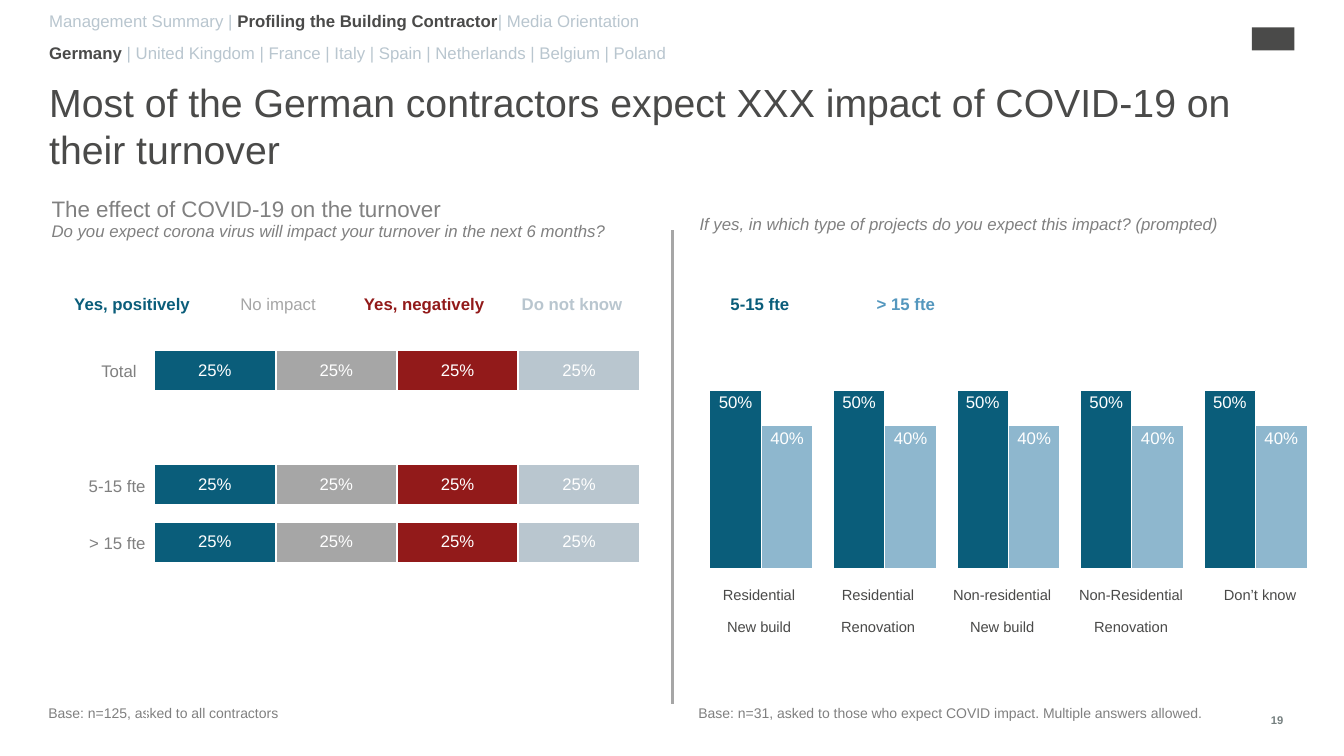
"""Build the slide on the expected impact of COVID-19 on German contractors' turnover."""
from lxml import etree
from pptx import Presentation, util as u
from pptx.chart import data
from pptx.dml import color
from pptx.enum import chart as charts, shapes, text
from pptx.oxml import ns

TEAL, BLUE, SKY = "0A5D7A", "5497BE", "8EB7CE"
GREY, RED, PALE = "A6A6A6", "921A1A", "B9C6CF"
DARK, MID, WHITE = "4A4A49", "808080", "FFFFFF"
LEFT, CENTER, RIGHT = text.PP_ALIGN.LEFT, text.PP_ALIGN.CENTER, text.PP_ALIGN.RIGHT
TOP, MIDDLE = text.MSO_ANCHOR.TOP, text.MSO_ANCHOR.MIDDLE


def rgb(value):
    return color.RGBColor.from_string(value)


def write(frame, paragraphs, layout):
    """Fill a text frame with paragraphs made of (content, colour, font values) runs."""
    for index, runs in enumerate(paragraphs):
        paragraph = frame.add_paragraph() if index else frame.paragraphs[0]
        for name, value in layout.items():
            setattr(paragraph, name, value)
        for content, shade, font in runs:
            run = paragraph.add_run()
            run.text = content
            run.font.color.rgb = rgb(shade)
            for name, value in {"name": "Arial", "bold": False, **font}.items():
                setattr(run.font, name, value)


presentation = Presentation()
presentation.slide_width, presentation.slide_height = u.Cm(33.87), u.Cm(19.05)
slide = presentation.slides.add_slide(presentation.slide_layouts[5])

spaced = {"space_before": u.Pt(4), "space_after": u.Pt(4)}
fixed = {**spaced, "line_spacing": u.Pt(15)}
tight = {"alignment": LEFT, "line_spacing": 0.9}
plain, bold = {"size": u.Pt(12)}, {"size": u.Pt(12), "bold": True}
italic = {"size": u.Pt(12), "italic": True}
small = {"size": u.Pt(10)}

boxes = [
    ((1.24, 0, 29.97, 1.52), MIDDLE, 0.3, {**fixed, "alignment": LEFT}, [
        [("Management Summary | ", PALE, plain),
         ("Profiling the Building Contractor", DARK, bold),
         ("| Media Orientation", PALE, plain)],
        [("Germany ", DARK, bold),
         ("| United Kingdom | France | Italy | Spain | Netherlands | Belgium | Poland",
          PALE, plain)]]),
    ((1.24, 1.98, 31.06, 1.35), TOP, 0, {**spaced, "alignment": LEFT}, [
        [("Most of the German contractors expect XXX impact of COVID-19 on their turnover",
          DARK, {"size": u.Pt(28)})]]),
    ((1.3, 5, 30.25, 1.04), TOP, 0, tight, [
        [("The effect of COVID-19 on the turnover", MID, {"size": u.Pt(16)})],
        [("Do you expect corona virus will impact your turnover in the next 6 months?",
          MID, italic)]]),
    ((17.63, 5.44, 14.66, 0.61), TOP, 0, tight, [
        [("If yes, in which type of projects do you expect this impact? (prompted)",
          MID, italic)]]),
    ((1.22, 17.81, 10.16, 0.61), TOP, 0, tight, [
        [("Base: n=125, asked to all contractors", MID, small)]]),
    ((17.6, 17.81, 13.97, 0.61), TOP, 0, tight, [
        [("Base: n=31, asked to those who expect COVID impact. Multiple answers allowed.",
          MID, small)]]),
    ((31.88, 17.96, 0.61, 0.38), MIDDLE, 0, {"alignment": CENTER}, [
        [("19", "757F7F", {"size": u.Pt(8), "bold": True})]]),
]
for place, anchor, top_margin, layout, paragraphs in boxes:
    left, top, width, height = map(u.Cm, place)
    if paragraphs[0][0][0].startswith("Most"):
        shape = slide.shapes.title
        shape.left, shape.top, shape.width, shape.height = left, top, width, height
    else:
        shape = slide.shapes.add_textbox(left, top, width, height)
    frame_format = {"word_wrap": True, "auto_size": text.MSO_AUTO_SIZE.NONE,
                    "vertical_anchor": anchor, "margin_left": 0, "margin_right": 0,
                    "margin_top": u.Cm(top_margin), "margin_bottom": 0}
    for name, value in frame_format.items():
        setattr(shape.text_frame, name, value)
    write(shape.text_frame, paragraphs, layout)

emblem = slide.shapes.add_shape(shapes.MSO_SHAPE.RECTANGLE,
                                u.Cm(31.55), u.Cm(0.69), u.Cm(1.07), u.Cm(0.58))
emblem.shadow.inherit = False
emblem.fill.solid()
emblem.fill.fore_color.rgb = rgb(DARK)
emblem.line.fill.background()

divider = slide.shapes.add_connector(shapes.MSO_CONNECTOR.STRAIGHT,
                                     u.Cm(16.94), u.Cm(17.73), u.Cm(16.94), u.Cm(5.79))
divider.line.color.rgb = rgb(GREY)
divider.line.width = u.Pt(2.25)
etree.SubElement(divider.element.spPr, ns.qn("a:effectLst"))

kinds, positions = charts.XL_CHART_TYPE, charts.XL_LABEL_POSITION
quarter_rows = [0.25, None, 0.25, 0.25, None, None, None]
chart_specs = [
    (kinds.BAR_STACKED_100, (3.86, 8.61, 12.29, 10.11), 100, positions.CENTER, 1.5,
     [(shade, quarter_rows) for shade in (TEAL, GREY, RED, PALE)]),
    (kinds.COLUMN_CLUSTERED, (17.63, 5.36, 15.57, 8.97), 0, positions.INSIDE_END, 0.75,
     [(TEAL, [0.5] * 5), (SKY, [0.4] * 5)]),
]
for kind, place, overlap, position, outline, bars in chart_specs:
    chart_data = data.CategoryChartData(number_format="0%")
    chart_data.categories = [str(number + 1) for number in range(len(bars[0][1]))]
    for number, (shade, values) in enumerate(bars, 1):
        chart_data.add_series(f"Series {number}", values)
    chart = slide.shapes.add_chart(kind, *map(u.Cm, place), chart_data).chart
    chart.has_legend = chart.has_title = False
    chart.font.name, chart.font.size = "Arial", u.Pt(12)
    chart.category_axis.reverse_order = kind == kinds.BAR_STACKED_100
    axis_format = {"minimum_scale": 0, "maximum_scale": 1, "major_unit": 1,
                   "has_major_gridlines": False, "visible": False}
    for name, value in axis_format.items():
        setattr(chart.value_axis, name, value)
    chart.category_axis.visible = False
    plot = chart.plots[0]
    plot.gap_width, plot.overlap, plot.vary_by_categories = 40, overlap, False
    for series, (shade, values) in zip(plot.series, bars):
        series.format.fill.solid()
        series.format.fill.fore_color.rgb = rgb(shade)
        series.format.line.color.rgb = rgb(WHITE)
        series.format.line.width = u.Pt(outline)
        labels = series.data_labels
        label_format = {"show_value": True, "position": position,
                        "number_format": "0%", "number_format_is_linked": False}
        for name, value in label_format.items():
            setattr(labels, name, value)
        labels.font.name, labels.font.size = "Arial", u.Pt(12)
        labels.font.color.rgb = rgb(WHITE)
    plot_area = chart.element.xpath("c:chart/c:plotArea")[0]
    for old_layout in plot_area.findall(ns.qn("c:layout")):
        plot_area.remove(old_layout)
    area_layout = etree.Element(ns.qn("c:layout"))
    manual = etree.SubElement(area_layout, ns.qn("c:manualLayout"))
    area = {"layoutTarget": "inner", "xMode": "edge", "yMode": "edge",
            "x": "0", "y": "0", "w": "1", "h": "1"}
    for name, value in area.items():
        etree.SubElement(manual, ns.qn(f"c:{name}")).set("val", value)
    plot_area.insert(0, area_layout)

legend = {"alignment": CENTER}
category = {**fixed, "alignment": CENTER}
row_label = {**fixed, "alignment": RIGHT}
category_names = [["Residential", "New build"], ["Residential", "Renovation"],
                  ["Non-residential", "New build"], ["Non-Residential", "Renovation"],
                  ["Don’t know"]]
row_names = ["Total", "", "5-15 fte", "> 15 fte", "", "", ""]
tables = [
    ((1.3, 7.32), [4.06, 3.3, 4.06, 3.4], 1.04, TOP, legend, [[
        [[("Yes, positively", TEAL, bold)]], [[("No impact", GREY, plain)]],
        [[("Yes, negatively", RED, bold)]], [[("Do not know", PALE, bold)]]]]),
    ((17.12, 7.32), [4.06, 3.3], 1.04, TOP, legend, [[
        [[("5-15 fte", TEAL, bold)]], [[("> 15 fte", BLUE, bold)]]]]),
    ((0.25, 8.61), [3.45], 1.44, MIDDLE, row_label,
     [[[[(name, MID, plain)]] if name else []] for name in row_names]),
    ((17.63, 14.55), [3, 3, 3.25, 3.25, 3.25], 2.36, TOP, category,
     [[[[(line, DARK, {"size": u.Pt(10.5)})] for line in lines]
       for lines in category_names]]),
]
for (left, top), widths, row_height, anchor, layout, rows in tables:
    table = slide.shapes.add_table(len(rows), len(widths), u.Cm(left), u.Cm(top),
                                   u.Cm(sum(widths)), u.Cm(row_height * len(rows))).table
    table.first_row = table.horz_banding = False
    for column, width in zip(table.columns, widths):
        column.width = u.Cm(width)
    for row_index, row in enumerate(rows):
        for column_index, paragraphs in enumerate(row):
            cell = table.cell(row_index, column_index)
            cell.fill.background()
            cell.vertical_anchor = anchor
            if layout is row_label and row_index:
                cell.margin_left = cell.margin_right = cell.margin_top = u.Cm(0.03)
                cell.margin_bottom = 0
            elif layout is legend:
                cell.margin_left = cell.margin_right = u.Cm(0.2)
            write(cell.text_frame, paragraphs, layout)

presentation.save("out.pptx")
